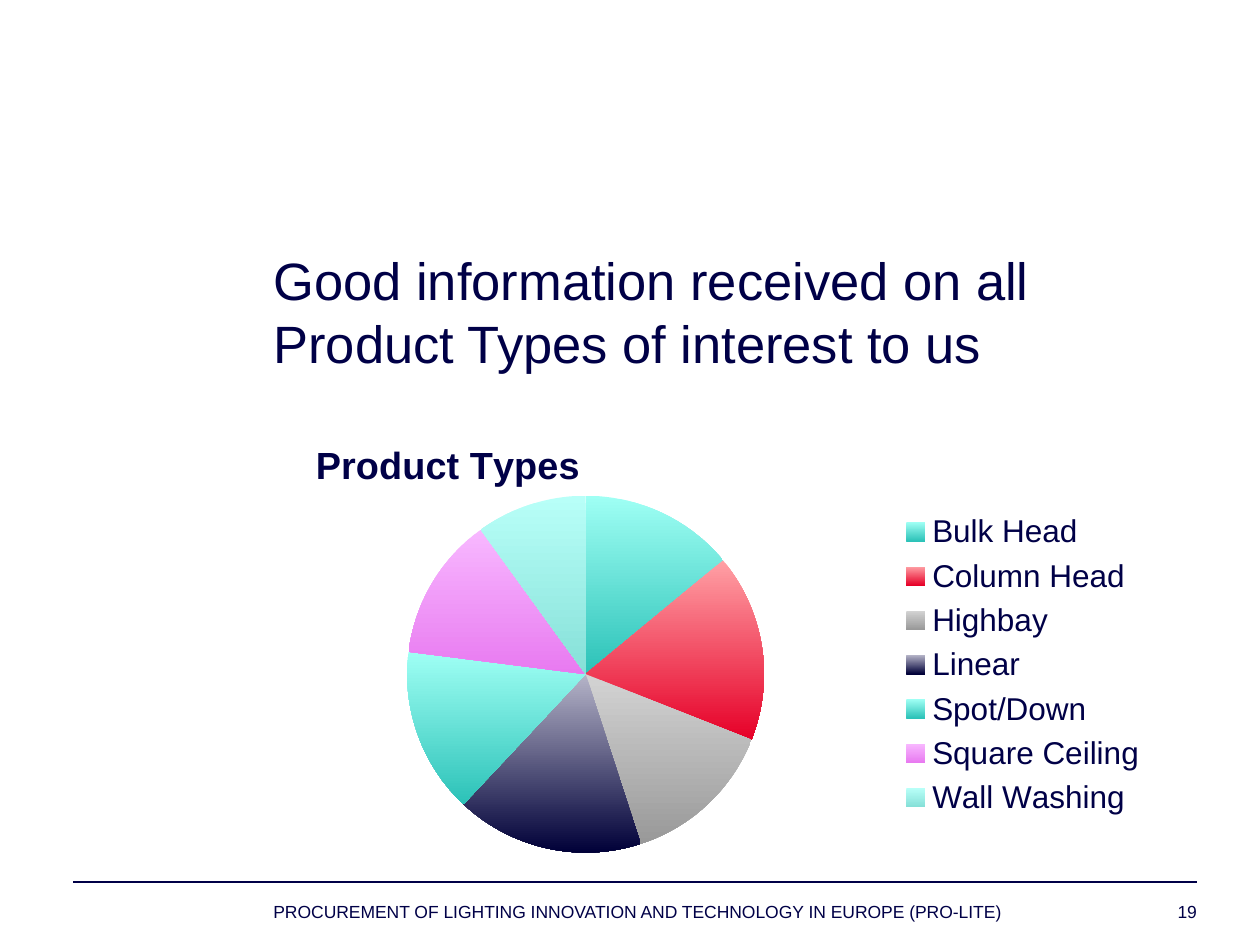
from lxml import etree
from pptx import Presentation
from pptx import util as u
from pptx.chart.data import CategoryChartData
from pptx.dml.color import RGBColor
from pptx.enum import chart as charts, shapes, text
from pptx.oxml.ns import qn

COLORS = {
    "navy": "000047",
    "turquoise": ("9FFFF4", "2CC2B8"),
    "red": ("FFA0A5", "E60028"),
    "grey": ("D3D3D3", "999999"),
    "ink": ("B5B4C8", "000038"),
    "pink": ("F8B8FF", "E87AF0"),
    "aqua": ("B8FFF8", "86E0D8"),
}
PRODUCTS = [
    ("Bulk Head", 14, "turquoise"),
    ("Column Head", 17, "red"),
    ("Highbay", 14, "grey"),
    ("Linear", 17, "ink"),
    ("Spot/Down", 15, "turquoise"),
    ("Square Ceiling", 13, "pink"),
    ("Wall Washing", 10, "aqua"),
]


def set_layout(element, before, x, y, width=None, height=None, inner=False):
    """Place a chart part by fractions of the chart area."""
    for old in element.findall(qn("c:layout")):
        element.remove(old)
    layout = etree.Element(qn("c:layout"))
    manual = etree.SubElement(layout, qn("c:manualLayout"))
    settings = [("layoutTarget", "inner")] if inner else []
    settings += [("xMode", "edge"), ("yMode", "edge"), ("x", x), ("y", y)]
    if width is not None:
        settings += [("w", width), ("h", height)]
    for name, value in settings:
        etree.SubElement(manual, qn(f"c:{name}")).set("val", str(value))
    if before is None:
        element.insert(0, layout)
    else:
        element.find(qn(before)).addnext(layout)


class SlideBuilder:
    font = "Arial"
    color = RGBColor.from_string(COLORS["navy"])

    def __init__(self, deck):
        self.page = deck.slides.add_slide(deck.slide_layouts[5])

    def style(self, font, size, bold=False):
        font.name, font.size, font.bold = self.font, u.Pt(size), bold
        font.color.rgb = self.color

    def fill_text(self, box, words, size, align):
        frame = box.text_frame
        frame.text = words
        frame.word_wrap = True
        frame.auto_size = text.MSO_AUTO_SIZE.NONE
        frame.vertical_anchor = text.MSO_ANCHOR.TOP
        frame.margin_left = frame.margin_right = 0
        frame.margin_top = frame.margin_bottom = 0
        para = frame.paragraphs[0]
        para.alignment = align
        self.style(para.runs[0].font, size)

    def title(self, words, left, top, width, height):
        box = self.page.shapes.title
        box.left, box.top = u.Inches(left), u.Inches(top)
        box.width, box.height = u.Inches(width), u.Inches(height)
        self.fill_text(box, words, 30, text.PP_ALIGN.LEFT)

    def label(self, words, left, top, width, height, align=text.PP_ALIGN.LEFT):
        box = self.page.shapes.add_textbox(
            *map(u.Inches, (left, top, width, height)))
        self.fill_text(box, words, 10, align)

    def rule(self, left, right, y):
        line = self.page.shapes.add_connector(
            shapes.MSO_CONNECTOR.STRAIGHT, *map(u.Inches, (left, y, right, y)))
        line.line.color.rgb = self.color
        line.line.width = u.Pt(1)
        etree.SubElement(line._element.spPr, qn("a:effectLst"))

    def pie(self, name, products, left, top, width, height):
        data = CategoryChartData()
        data.categories = [product for product, _, _ in products]
        data.add_series(name, [value for _, value, _ in products])
        chart = self.page.shapes.add_chart(
            charts.XL_CHART_TYPE.PIE,
            *map(u.Inches, (left, top, width, height)), data).chart
        self.style(chart.font, 18)

        chart.has_title = True
        chart.chart_title.text_frame.text = name
        heading = chart.chart_title.text_frame.paragraphs[0].runs[0]
        self.style(heading.font, 21.6, bold=True)
        chart.chart_title.include_in_layout = False

        chart.has_legend = True
        chart.legend.position = charts.XL_LEGEND_POSITION.RIGHT
        chart.legend.include_in_layout = False
        self.style(chart.legend.font, 18)

        plot = chart.plots[0]
        plot.vary_by_categories = True
        plot.has_data_labels = False
        for index, (_, _, color) in enumerate(products):
            self.shade(plot.series[0].points[index].format, COLORS[color])

        root = chart._chartSpace.chart
        set_layout(root.plotArea, None, 0.15, 0.21, 0.4, 0.75, inner=True)
        set_layout(chart.chart_title._element, "c:tx", 0.04, 0.08)
        set_layout(chart.legend._element, "c:legendPos", 0.7, 0.23, 0.28, 0.67)

    def shade(self, look, colors):
        """Fill with a gradient running from top to bottom."""
        look.fill.gradient()
        look.fill.gradient_angle = 270
        for stop, color in zip(look.fill.gradient_stops, colors):
            stop.color.rgb = RGBColor.from_string(color)
        look.line.fill.background()


def main():
    deck = Presentation()
    deck.slide_width, deck.slide_height = u.Inches(10), u.Inches(7.5)
    slide = SlideBuilder(deck)
    slide.rule(0.58, 9.5, 7)
    slide.pie("Product Types", PRODUCTS, 2.17, 3.14, 7.08, 3.78)
    slide.title("Good information received on all Product Types of interest to us",
                2.17, 1.97, 7.08, 0.62)
    slide.label("PROCUREMENT OF LIGHTING INNOVATION AND TECHNOLOGY IN EUROPE (PRO-LITE)",
                2.17, 7.15, 6.17, 0.35)
    slide.label("19", 8.5, 7.15, 1, 0.35, text.PP_ALIGN.RIGHT)
    deck.save("out.pptx")


if __name__ == "__main__":
    main()
